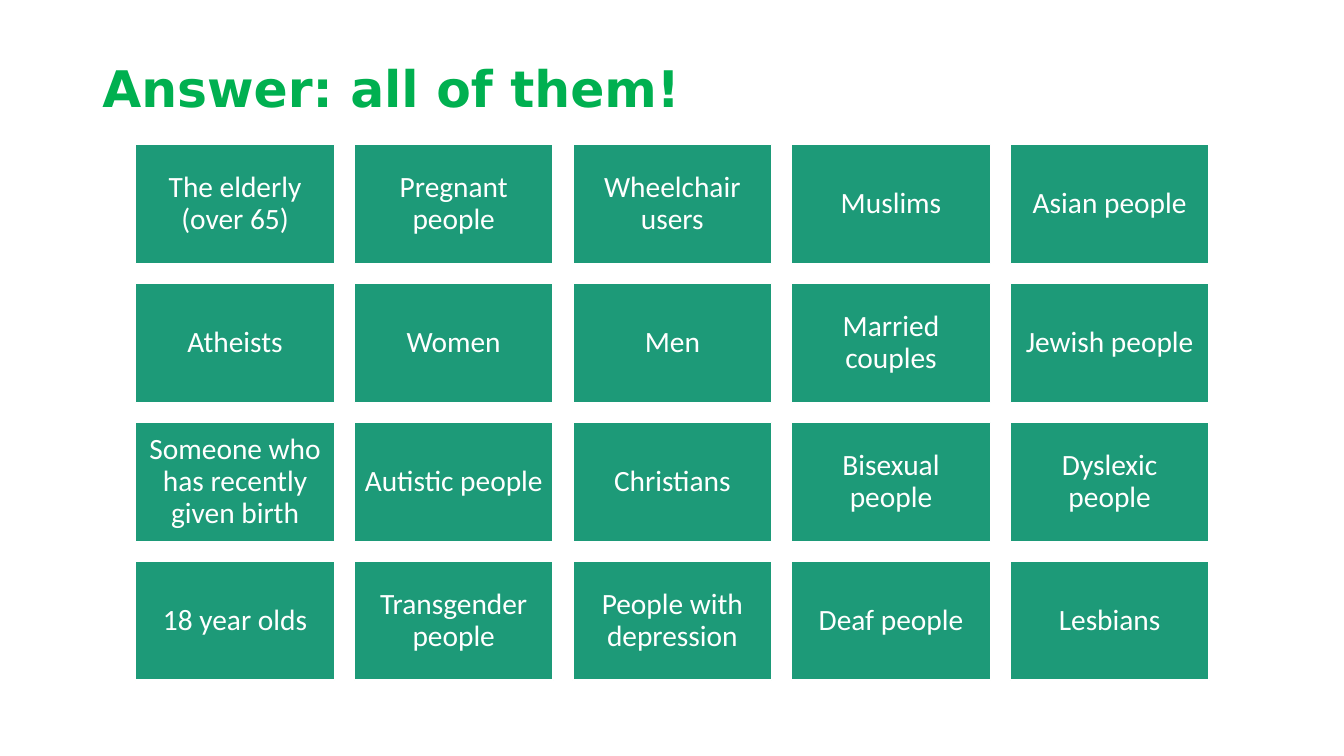
"""Build a slide with a grid of groups of people."""
from pptx import Presentation
from pptx.dml.color import RGBColor as Rgb
from pptx.enum.shapes import MSO_SHAPE as Kind
from pptx.enum.text import MSO_ANCHOR as Anchor, PP_ALIGN as Align
from pptx.util import Cm, Pt

GREEN, TEAL, WHITE = "00B050", "1D9A78", "FFFFFF"
GROUPS = [
    ["The elderly (over 65)", "Pregnant people", "Wheelchair users",
     "Muslims", "Asian people"],
    ["Atheists", "Women", "Men", "Married couples", "Jewish people"],
    ["Someone who has recently given birth", "Autistic people", "Christians",
     "Bisexual people", "Dyslexic people"],
    ["18 year olds", "Transgender people", "People with depression",
     "Deaf people", "Lesbians"],
]
LEFT, TOP, WIDE, HIGH, GAP = 3.42, 3.64, 5.01, 3, 0.5


def paint(part, color):
    """Give a fill or line one solid colour."""
    part.solid()
    part.fore_color.rgb = Rgb.from_string(color)


def write(shape, text, face, size, color, align, inset, bold=False):
    """Set one paragraph of text, centred vertically in the shape."""
    frame = shape.text_frame
    frame.word_wrap = True
    frame.vertical_anchor = Anchor.MIDDLE
    frame.margin_left = frame.margin_right = Cm(inset)
    frame.margin_top = frame.margin_bottom = Cm(inset)
    para = frame.paragraphs[0]
    para.text = text
    para.alignment = align
    para.line_spacing = 0.9
    font = para.font
    font.name, font.size, font.bold = face, Pt(size), bold
    paint(font.fill, color)


def add_title(slide, text):
    """Add the slide heading."""
    box = slide.shapes.add_textbox(Cm(2.33), Cm(0.46), Cm(29.21), Cm(3.68))
    write(box, text, "DejaVu Sans", 36, GREEN, Align.LEFT, 0.25, True)


def add_tile(slide, text, row, col):
    """Add one labelled tile at its place in the grid."""
    left, top = LEFT + col * (WIDE + GAP), TOP + row * (HIGH + GAP)
    tile = slide.shapes.add_shape(
        Kind.RECTANGLE, Cm(left), Cm(top), Cm(WIDE), Cm(HIGH))
    tile.shadow.inherit = False
    paint(tile.fill, TEAL)
    paint(tile.line.fill, WHITE)
    tile.line.width = Pt(1)
    write(tile, text, "Calibri", 21, WHITE, Align.CENTER, 0.22)


def main():
    """Create and save the deck."""
    deck = Presentation()
    deck.slide_width, deck.slide_height = Cm(33.87), Cm(19.05)
    slide = deck.slides.add_slide(deck.slide_layouts[6])
    for row, names in enumerate(GROUPS):
        for col, name in enumerate(names):
            add_tile(slide, name, row, col)
    add_title(slide, "Answer: all of them!")
    deck.save("out.pptx")


if __name__ == "__main__":
    main()
